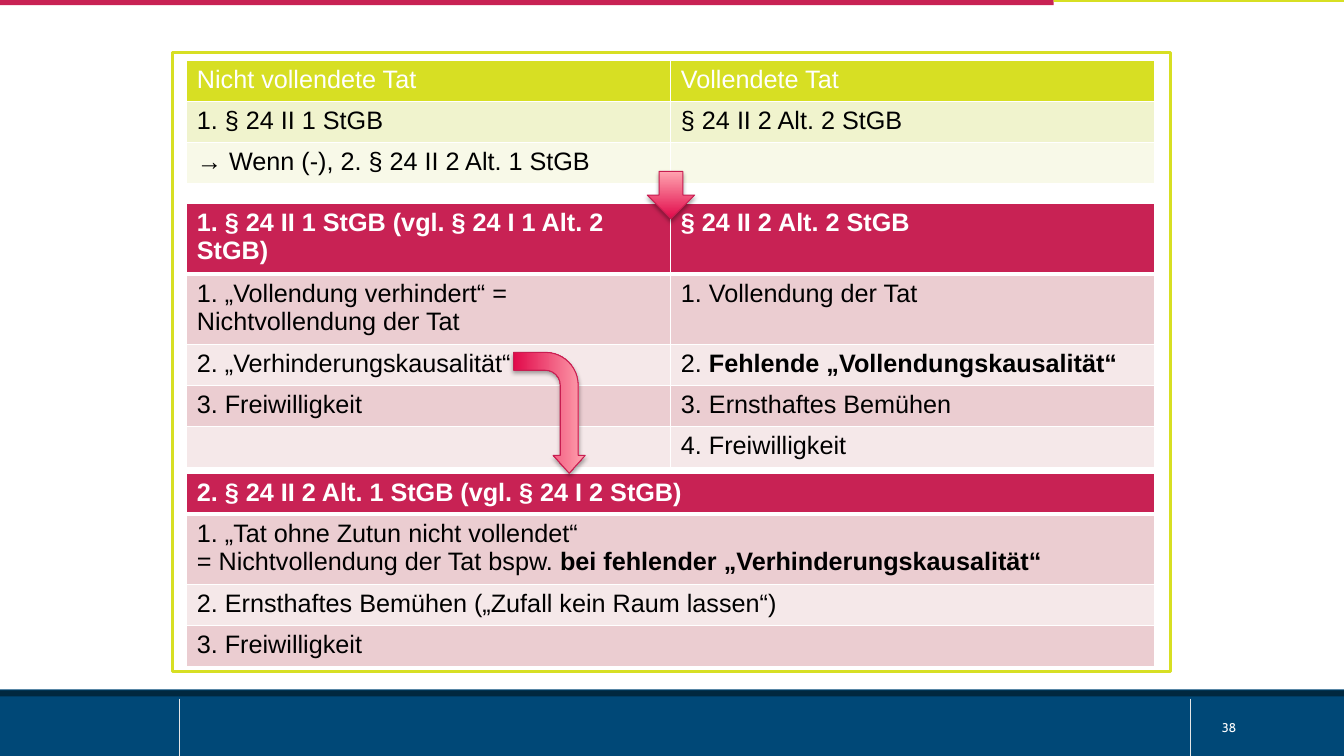
from dataclasses import dataclass

from lxml import etree
from pptx import Presentation
from pptx.dml.color import RGBColor
from pptx.enum.shapes import MSO_CONNECTOR, MSO_SHAPE
from pptx.enum.text import MSO_ANCHOR
from pptx.oxml.ns import qn
from pptx.util import Inches, Pt

RECTANGLE = MSO_SHAPE.RECTANGLE
DOWN_ARROW = MSO_SHAPE.DOWN_ARROW
BENT_ARROW = MSO_SHAPE.BENT_ARROW
STRAIGHT = MSO_CONNECTOR.STRAIGHT
MIDDLE = MSO_ANCHOR.MIDDLE

WHITE = RGBColor(0xFF, 0xFF, 0xFF)
BLACK = RGBColor(0x00, 0x00, 0x00)
BLUE = RGBColor(0x00, 0x48, 0x77)
NAVY = RGBColor(0x01, 0x28, 0x3F)
GREY = RGBColor(0xE6, 0xE6, 0xE6)
CRIMSON = RGBColor(0xC8, 0x22, 0x54)
ROSE = RGBColor(0xEB, 0xCD, 0xD1)
PALE_ROSE = RGBColor(0xF5, 0xE8, 0xE9)
LIME = RGBColor(0xD7, 0xDF, 0x23)
LIGHT_LIME = RGBColor(0xF0, 0xF3, 0xCD)
PALE_LIME = RGBColor(0xF8, 0xF9, 0xE8)
ARROW_DARK = RGBColor(0xE1, 0x09, 0x4A)
ARROW_LIGHT = RGBColor(0xFF, 0xA4, 0xB0)
ARROW_EDGE = RGBColor(0xC8, 0x1D, 0x51)

WIDTH, HEIGHT = Inches(13.33), Inches(7.5)
TABLE_LEFT, TABLE_WIDTH = 13.9, 72.04
ROW, TALL_ROW = 5.42, 8.53


@dataclass(frozen=True)
class Area:
    left: float
    top: float
    width: float
    height: float

    def box(self) -> tuple[int, int, int, int]:
        return across(self.left), down(self.top), across(self.width), down(self.height)


@dataclass(frozen=True)
class Span:
    text: str
    bold: bool = False


Cell = list[list[Span]]


@dataclass(frozen=True)
class Scheme:
    header: RGBColor
    bands: tuple[RGBColor, RGBColor]
    bold_header: bool
    header_rule: float


@dataclass(frozen=True)
class Grid:
    top: float
    heights: list[float]
    scheme: Scheme
    rows: list[list[Cell]]


@dataclass(frozen=True)
class Arrow:
    preset: int
    area: Area
    rotation: float
    adjustments: tuple[float, ...]


def across(share: float) -> int:
    return round(WIDTH * share / 100)


def down(share: float) -> int:
    return round(HEIGHT * share / 100)


def line(text: str) -> Cell:
    return [[Span(text)]]


LIME_SCHEME = Scheme(LIME, (LIGHT_LIME, PALE_LIME), False, 1)
CRIMSON_SCHEME = Scheme(CRIMSON, (ROSE, PALE_ROSE), True, 3)

BARS = [
    (Area(0, 91.2, 100, 8.8), BLUE),
    (Area(0, 91.33, 100, 0.8), NAVY),
    (Area(0, 0, 78.4, 0.67), CRIMSON),
    (Area(78.4, 0, 21.6, 0.27), LIME),
]
FOOTER_RULES = [13.35, 88.6]
FRAME = Area(12.83, 6.93, 74.27, 81.87)
PAGE_NUMBER = Area(90.17, 93.6, 9.83, 5.33)

GRIDS = [
    Grid(8, [ROW] * 3, LIME_SCHEME, [
        [line("Nicht vollendete Tat"), line("Vollendete Tat")],
        [line("1. § 24 II 1 StGB"), line("§ 24 II 2 Alt. 2 StGB")],
        [line("→ Wenn (-), 2. § 24 II 2 Alt. 1 StGB"), []],
    ]),
    Grid(26.93, [TALL_ROW] * 2 + [ROW] * 3, CRIMSON_SCHEME, [
        [line("1. § 24 II 1 StGB (vgl. § 24 I 1 Alt. 2 StGB)"), line("§ 24 II 2 Alt. 2 StGB")],
        [line("1. „Vollendung verhindert“ = Nichtvollendung der Tat"), line("1. Vollendung der Tat")],
        [line("2. „Verhinderungskausalität“"),
         [[Span("2. "), Span("Fehlende „Vollendungskausalität“", True)]]],
        [line("3. Freiwilligkeit"), line("3. Ernsthaftes Bemühen")],
        [[], line("4. Freiwilligkeit")],
    ]),
    Grid(62.6, [ROW, TALL_ROW, ROW, ROW], CRIMSON_SCHEME, [
        [line("2. § 24 II 2 Alt. 1 StGB (vgl. § 24 I 2 StGB)")],
        [[[Span("1. „Tat ohne Zutun nicht vollendet“")],
          [Span("= Nichtvollendung der Tat bspw. "),
           Span("bei fehlender „Verhinderungskausalität“", True)]]],
        [line("2. Ernsthaftes Bemühen („Zufall kein Raum lassen“)")],
        [line("3. Freiwilligkeit")],
    ]),
]

ARROWS = [
    Arrow(DOWN_ARROW, Area(48.16, 22.67, 3.53, 6.27), 0, ()),
    Arrow(BENT_ARROW, Area(36.38, 49.87, 9, 9.47), 90, (0.25, 0.224, 0.25, 0.458)),
]


def add_block(slide, area: Area, fill: RGBColor, edge: RGBColor | None = None) -> None:
    shape = slide.shapes.add_shape(RECTANGLE, *area.box())
    shape.shadow.inherit = False
    shape.fill.solid()
    shape.fill.fore_color.rgb = fill
    if edge is None:
        shape.line.fill.background()
    else:
        shape.line.color.rgb = edge
        shape.line.width = Pt(2)


def add_rule(slide, left: float) -> None:
    rule = slide.shapes.add_connector(STRAIGHT, across(left), down(92.4), across(left), HEIGHT)
    rule.line.color.rgb = GREY
    rule.line.width = Pt(0.5)
    etree.SubElement(rule._element.spPr, qn("a:effectLst"))


def add_run(paragraph, span: Span, font: str, size: float, color: RGBColor) -> None:
    run = paragraph.add_run()
    run.text = span.text
    run.font.name = font
    run.font.size = Pt(size)
    run.font.bold = span.bold
    run.font.color.rgb = color


def add_borders(cell, widths: dict[str, float]) -> None:
    properties = cell._tc.get_or_add_tcPr()
    for side, width in widths.items():
        border = etree.SubElement(properties, qn(f"a:{side}"), w=str(Pt(width)))
        fill = etree.SubElement(border, qn("a:solidFill"))
        etree.SubElement(fill, qn("a:srgbClr"), val=str(WHITE))


def add_grid(slide, grid: Grid) -> None:
    scheme = grid.scheme
    column_count = len(grid.rows[0])
    area = Area(TABLE_LEFT, grid.top, TABLE_WIDTH, sum(grid.heights))
    table = slide.shapes.add_table(len(grid.rows), column_count, *area.box()).table
    for column in table.columns:
        column.width = across(TABLE_WIDTH / column_count)
    for index, contents in enumerate(grid.rows):
        header = index == 0
        table.rows[index].height = down(grid.heights[index])
        top = scheme.header_rule if index == 1 else 1
        bottom = scheme.header_rule if header else 1
        for position, content in enumerate(contents):
            cell = table.cell(index, position)
            add_borders(cell, {"lnL": 1, "lnR": 1, "lnT": top, "lnB": bottom})
            cell.fill.solid()
            cell.fill.fore_color.rgb = scheme.header if header else scheme.bands[(index - 1) % 2]
            frame = cell.text_frame
            for number, spans in enumerate(content):
                paragraph = frame.add_paragraph() if number else frame.paragraphs[0]
                for span in spans:
                    bold = span.bold or (header and scheme.bold_header)
                    add_run(paragraph, Span(span.text, bold), "Arial", 18, WHITE if header else BLACK)


def add_arrow(slide, arrow: Arrow) -> None:
    shape = slide.shapes.add_shape(arrow.preset, *arrow.area.box())
    shape.rotation = arrow.rotation
    for index, value in enumerate(arrow.adjustments):
        shape.adjustments[index] = value
    shape.fill.gradient()
    shape.fill.gradient_angle = 90
    for stop, color in zip(shape.fill.gradient_stops, (ARROW_DARK, ARROW_LIGHT)):
        stop.color.rgb = color
    shape.line.color.rgb = ARROW_EDGE
    shape.line.width = Pt(0.75)
    shape.shadow.inherit = False
    effects = shape._element.spPr.find(qn("a:effectLst"))
    shadow = etree.SubElement(effects, qn("a:outerShdw"), blurRad=str(Pt(3.1)),
                              dist=str(Pt(1.8)), dir="5400000", rotWithShape="0")
    color = etree.SubElement(shadow, qn("a:srgbClr"), val=str(BLACK))
    etree.SubElement(color, qn("a:alpha"), val="35000")


def main() -> None:
    presentation = Presentation()
    presentation.slide_width, presentation.slide_height = WIDTH, HEIGHT
    slide = presentation.slides.add_slide(presentation.slide_layouts.get_by_name("Blank"))
    for area, color in BARS:
        add_block(slide, area, color)
    for left in FOOTER_RULES:
        add_rule(slide, left)
    frame = slide.shapes.add_textbox(*PAGE_NUMBER.box()).text_frame
    frame.word_wrap = True
    frame.vertical_anchor = MIDDLE
    add_run(frame.paragraphs[0], Span("38"), "Cabin", 9, WHITE)
    add_block(slide, FRAME, WHITE, LIME)
    for grid in GRIDS:
        add_grid(slide, grid)
    for arrow in ARROWS:
        add_arrow(slide, arrow)
    presentation.save("out.pptx")


if __name__ == "__main__":
    main()
